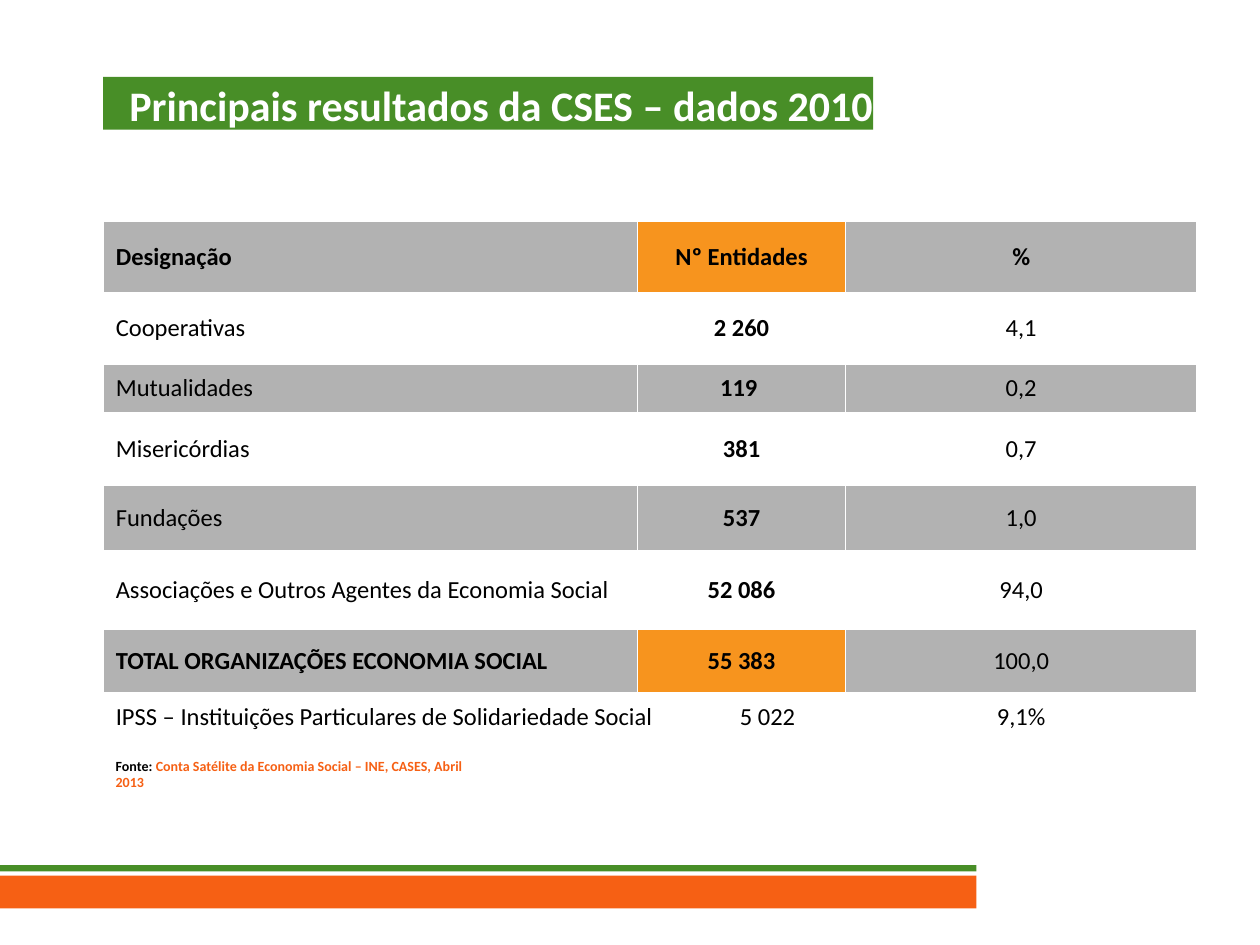
from pptx import Presentation
from pptx import util as u
from pptx.dml import color
from pptx.enum import shapes, text
from pptx.oxml import ns
from lxml import etree

Pt = u.Pt
GREEN, ORANGE, AMBER = "488E27", "F66014", "F7941E"
GREY, WHITE, BLACK = "B2B2B2", "FFFFFF", "000000"


def paint(fill, hex_color):
    fill.solid()
    fill.fore_color.rgb = color.RGBColor.from_string(hex_color)


def add_run(paragraph, words, size, hex_color, bold):
    run = paragraph.add_run()
    run.text = words
    run.font.name = "Calibri"
    run.font.size = Pt(size)
    run.font.bold = bold
    run.font.color.rgb = color.RGBColor.from_string(hex_color)


presentation = Presentation()
presentation.slide_width, presentation.slide_height = Pt(720), Pt(540)
slide = presentation.slides.add_slide(presentation.slide_layouts[5])

# Footer bands
for top, height, band_color in [(500.4, 18.7, ORANGE), (494.4, 3.6, GREEN)]:
    band = slide.shapes.add_shape(
        shapes.MSO_SHAPE.RECTANGLE, Pt(0), Pt(top), Pt(558), Pt(height))
    band.shadow.inherit = False
    paint(band.fill, band_color)
    band.line.fill.background()

# Title
title = slide.shapes.title
title.left, title.top, title.width, title.height = Pt(59), Pt(43.9), Pt(440), Pt(30.2)
paint(title.fill, GREEN)
frame = title.text_frame
frame.margin_left = frame.margin_right = frame.margin_top = frame.margin_bottom = 0
frame.auto_size = text.MSO_AUTO_SIZE.NONE
frame.word_wrap = True
frame.vertical_anchor = text.MSO_ANCHOR.TOP
paragraph = frame.paragraphs[0]
paragraph.alignment = text.PP_ALIGN.RIGHT
paragraph.line_spacing = 1.06
add_run(paragraph, "Principais resultados da CSES – dados 2010", 24, WHITE, True)

# Results table
rows = [
    ("Designação", "Nº Entidades", "%"),
    ("Cooperativas", "2 260", "4,1"),
    ("Mutualidades", "119 ", "0,2"),
    ("Misericórdias", "381", "0,7"),
    ("Fundações", "537", "1,0"),
    ("Associações e Outros Agentes da Economia Social", "52 086", "94,0"),
    ("TOTAL ORGANIZAÇÕES ECONOMIA SOCIAL", "55 383", "100,0"),
    ("IPSS – Instituições Particulares de Solidariedade Social\t5 022", "", "9,1%"),
]
row_heights = [41, 41, 27.6, 41.6, 37.4, 44.8, 36.6, 27.4]
column_widths = [305.4, 118.8, 200.8]
HEADER, TOTAL, IPSS = 0, 6, 7

table = slide.shapes.add_table(
    len(rows), 3, Pt(59), Pt(126.2), Pt(sum(column_widths)), Pt(sum(row_heights))).table
for column, width in zip(table.columns, column_widths):
    column.width = Pt(width)
table.cell(IPSS, 0).merge(table.cell(IPSS, 1))

for r, values in enumerate(rows):
    table.rows[r].height = Pt(row_heights[r])
    for c, value in enumerate(values):
        cell = table.cell(r, c)
        if cell.is_spanned:
            continue
        highlighted = c == 1 and r in (HEADER, TOTAL)
        paint(cell.fill, AMBER if highlighted else WHITE if r % 2 else GREY)
        cell.vertical_anchor = text.MSO_ANCHOR.MIDDLE
        paragraph = cell.text_frame.paragraphs[0]
        paragraph.alignment = text.PP_ALIGN.CENTER if c else text.PP_ALIGN.LEFT
        if "\t" in value:
            properties = paragraph._p.get_or_add_pPr()
            tabs = etree.SubElement(properties, ns.qn("a:tabLst"))
            etree.SubElement(tabs, ns.qn("a:tab"), pos=str(Pt(356.6)), algn="l")
        bold = r == HEADER or c == 1 or (r == TOTAL and c == 0)
        add_run(paragraph, value, 14, BLACK, bold)

# Source note
note = slide.shapes.add_textbox(Pt(59), Pt(429.1), Pt(229.7), Pt(48.2))
note.text_frame.word_wrap = True
paragraph = note.text_frame.paragraphs[0]
add_run(paragraph, "Fonte: ", 8, BLACK, True)
add_run(paragraph, "Conta Satélite da Economia Social – INE, CASES, Abril 2013", 8, ORANGE, True)

presentation.save("out.pptx")
